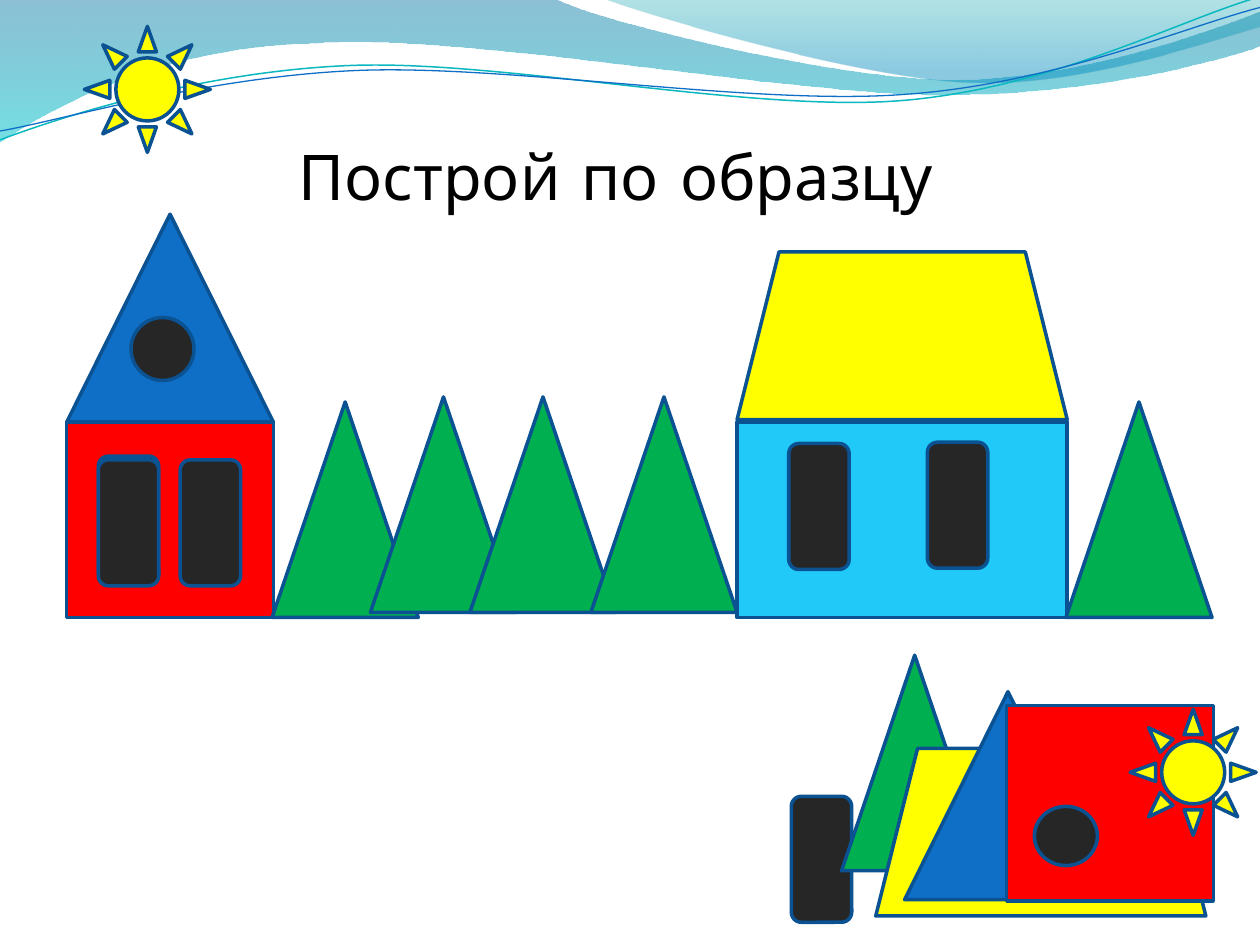
from math import cos, radians, sin

from lxml import etree
from pptx import Presentation
from pptx.dml.color import RGBColor
from pptx.enum.shapes import MSO_SHAPE
from pptx.enum.text import MSO_ANCHOR, PP_ALIGN
from pptx.util import Cm, Pt

TRI = MSO_SHAPE.ISOSCELES_TRIANGLE
RECT = MSO_SHAPE.RECTANGLE
ROUND = MSO_SHAPE.ROUNDED_RECTANGLE
DISC = MSO_SHAPE.FLOWCHART_CONNECTOR
TRAP = MSO_SHAPE.TRAPEZOID
SUN = MSO_SHAPE.SUN
LOW = MSO_ANCHOR.BOTTOM
MID = PP_ALIGN.CENTER

BLACK = RGBColor(0x00, 0x00, 0x00)
DARK = RGBColor(0x26, 0x26, 0x26)
EDGE = RGBColor(0x0B, 0x52, 0x92)
BLUE = RGBColor(0x0F, 0x6F, 0xC6)
RED = RGBColor(0xFF, 0x00, 0x00)
GREEN = RGBColor(0x00, 0xB0, 0x50)
SKY = RGBColor(0x20, 0xC9, 0xF8)
YELLOW = RGBColor(0xFF, 0xFF, 0x00)
TEAL = RGBColor(0x0A, 0xB8, 0xBF)
SEA = RGBColor(0x00, 0x74, 0xA1)
AQUA = RGBColor(0x00, 0xC6, 0xCF)
MINT = RGBColor(0x00, 0xA1, 0xA9)
AZURE = RGBColor(0x00, 0x8B, 0xBF)

TITLE = "Построй по образцу"
TILT = 2.7

WAVES = [
    ([[(0, 0)], [(4.4, -0.01)],
      [(4.76, 0.17), (6.64, 0.63), (7.58, 0.63)],
      [(8.53, 0.63), (9.58, 0.26), (10, 0.09)], [(10.01, 0.36)],
      [(9.83, 0.44), (8.7, 0.76), (7.46, 0.75)],
      [(6.22, 0.75), (3.82, 0.28), (2.57, 0.34)],
      [(1.29, 0.36), (0.46, 0.83), (-0.01, 1.13)], [(0, 0)]],
     [(0, SEA, 45), (1, AQUA, 55)]),
    ([[(4.79, -0.01)],
      [(5.09, 0.11), (6.82, 0.62), (7.69, 0.65)],
      [(8.56, 0.69), (9.61, 0.32), (10, 0.21)], [(10, 0)], [(4.79, -0.01)]],
     [(0, MINT, 30), (0.8, AZURE, 45)]),
]
LINES = [
    ([[(0, 1.11)],
      [(0.48, 0.93), (1.58, 0.57), (2.77, 0.52)],
      [(3.95, 0.47), (5.93, 0.89), (7.13, 0.8)],
      [(8.33, 0.71), (9.38, 0.15), (9.98, -0.02)]], (4.99, 0.58), TEAL, 0.85),
    ([[(0, 1.04)],
      [(0.47, 0.96), (1.64, 0.61), (2.83, 0.56)],
      [(4.03, 0.51), (5.97, 0.84), (7.17, 0.75)],
      [(8.36, 0.67), (9.41, 0.21), (10, 0.06)]], (5, 0.59), BLUE, 0.75),
]
KINDS = {
    "spire": (TRI, 1.64, 1.65, BLUE),
    "tower": (RECT, 1.64, 1.55, RED),
    "porthole": (DISC, 0.5, 0.5, DARK),
    "oval": (DISC, 0.5, 0.47, DARK),
    "window": (ROUND, 0.48, 1, DARK),
    "tree": (TRI, 1.16, 1.71, GREEN),
    "house": (RECT, 2.62, 1.55, SKY),
    "roof": (TRAP, 2.62, 1.33, YELLOW),
    "sun": (SUN, 1, 1, YELLOW),
}
PARTS = [
    ("spire", 0.53, 1.7), ("tower", 0.53, 3.35), ("porthole", 1.04, 2.52),
    ("window", 0.78, 3.62), ("window", 1.43, 3.65),
    ("tree", 2.16, 3.19), ("tree", 2.94, 3.15),
    ("tree", 3.73, 3.15), ("tree", 4.69, 3.15),
    ("house", 5.85, 3.35), ("roof", 5.85, 2), ("window", 0.78, 3.65),
    ("window", 6.26, 3.52), ("window", 7.36, 3.51),
    ("tree", 8.46, 3.19), ("sun", 0.67, 0.21),
    ("window", 6.28, 6.32), ("tree", 6.68, 5.2), ("roof", 6.95, 5.94),
    ("spire", 7.18, 5.49), ("tower", 7.99, 5.6), ("oval", 8.21, 6.4),
    ("sun", 8.97, 5.63),
]


def size(inch):
    return Cm(inch * 2.54)


def turn(path, hub, angle):
    c, s = cos(radians(angle)), sin(radians(angle))
    a, b = hub
    return [[(a + (x - a) * c - (y - b) * s, b + (x - a) * s + (y - b) * c)
             for x, y in seg] for seg in path]


def draw(slide, path, close):
    dots = [(size(x), size(y)) for seg in path for x, y in seg]
    pen = slide.shapes.build_freeform(*dots[0], scale=1.0)
    pen.add_line_segments(dots[1:], close=close)
    shape = pen.convert_to_shape()
    shape.shadow.inherit = False
    bend(shape, path)
    return shape


def bend(shape, path):
    steps = iter(shape._element.spPr.findall(".//{*}lnTo"))
    for seg in path[1:]:
        first, *rest = [next(steps) for _ in seg]
        if rest:
            first.tag = first.tag.replace("lnTo", "cubicBezTo")
        for step in rest:
            first.append(step[0])
            step.getparent().remove(step)


def blend(shape, stops):
    shape.line.fill.background()
    shape.fill.gradient()
    shape.fill.gradient_angle = 270
    for stop, (pos, tint, _) in zip(shape.fill.gradient_stops, stops):
        stop.position = pos
        stop.color.rgb = tint
    tints = shape._element.spPr.findall(".//{*}gs/{*}srgbClr")
    for tint, (_, _, alpha) in zip(tints, stops):
        tag = tint.tag.replace("srgbClr", "alpha")
        etree.SubElement(tint, tag).set("val", str(alpha * 1000))


def stroke(shape, tint, width):
    shape.line.color.rgb = tint
    shape.line.width = Pt(width)


def place(slide, kind, left, top):
    form, wide, high, tint = KINDS[kind]
    shape = slide.shapes.add_shape(form, *map(size, (left, top, wide, high)))
    shape.shadow.inherit = False
    shape.fill.solid()
    shape.fill.fore_color.rgb = tint
    stroke(shape, EDGE, 2)


def write(slide, text, *, box, font, points, tint, align, anchor):
    frame = slide.shapes.add_textbox(*map(size, box)).text_frame
    frame.word_wrap = True
    frame.vertical_anchor = anchor
    frame.margin_left = frame.margin_right = frame.margin_bottom = 0
    frame.margin_top = size(0.05)
    para = frame.paragraphs[0]
    para.alignment = align
    run = para.add_run()
    run.text = text
    run.font.name = font
    run.font.size = Pt(points)
    run.font.color.rgb = tint


def main():
    deck = Presentation()
    deck.slide_width, deck.slide_height = size(10), size(7.5)
    slide = deck.slides.add_slide(deck.slide_layouts[6])
    for path, stops in WAVES:
        blend(draw(slide, path, True), stops)
    for path, hub, tint, width in LINES:
        curve = draw(slide, turn(path, hub, TILT), False)
        curve.rotation = 360 - TILT
        curve.fill.background()
        stroke(curve, tint, width)
    write(slide, TITLE, box=(0.35, 0.76, 9.08, 0.93), font="Comic Neue",
          points=36, tint=BLACK, align=MID, anchor=LOW)
    for part in PARTS:
        place(slide, *part)
    deck.save("out.pptx")


if __name__ == "__main__":
    main()
